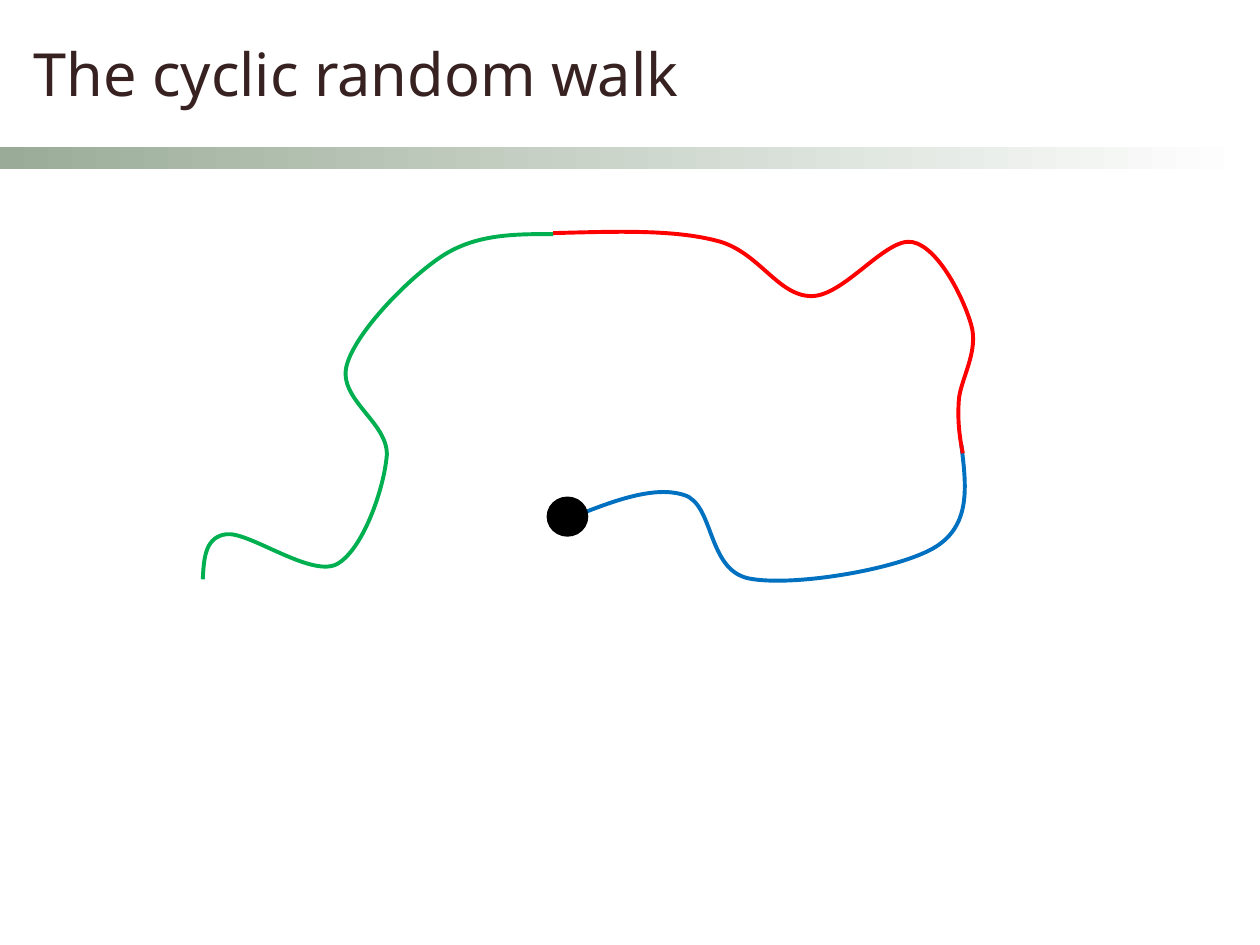
from math import cos, radians, sin

from lxml.etree import SubElement
from pptx import Presentation
from pptx.dml.color import RGBColor
from pptx.enum.shapes import MSO_SHAPE as Preset
from pptx.enum.text import MSO_ANCHOR as Anchor, PP_ALIGN as Align
from pptx.oxml.ns import qn
from pptx.util import Cm, Pt

BROWN = RGBColor(0x37, 0x22, 0x21)
SAGE = RGBColor(0x9A, 0xAC, 0x98)
WHITE = RGBColor(0xFF, 0xFF, 0xFF)
BLACK = RGBColor(0, 0, 0)
BLUE = RGBColor(0x00, 0x70, 0xC0)
RED = RGBColor(0xFF, 0, 0)
GREEN = RGBColor(0x00, 0xB0, 0x50)

TITLE = "The cyclic random walk"
FONT = "Noto Sans"

# Each stretch: colour, tilt in degrees, Bezier points in cm (start, then triples).
STRETCHES = [
    (BLUE, 0, [
        (11.46, 10.46),
        (12.32, 10.11), (13.18, 9.78), (13.79, 9.98),
        (14.4, 10.16), (14.25, 11.48), (15.09, 11.66),
        (15.95, 11.84), (18.14, 11.48), (18.87, 11.02),
        (19.58, 10.57), (19.48, 9.78), (19.38, 8.97),
    ]),
    (RED, 0, [
        (19.41, 9.14),
        (19.35, 8.84), (19.3, 8.51), (19.33, 8.08),
        (19.35, 7.67), (19.74, 7.09), (19.58, 6.55),
        (19.43, 6.02), (18.92, 4.98), (18.39, 4.88),
        (17.86, 4.78), (17.02, 5.97), (16.36, 5.97),
        (15.67, 5.97), (15.29, 5.05), (14.43, 4.85),
        (13.54, 4.62), (12.34, 4.67), (11.15, 4.7),
    ]),
    (GREEN, -4.7, [
        (11.15, 4.72),
        (10.36, 4.72), (9.6, 4.72), (8.92, 5.16),
        (8.23, 5.61), (7.16, 6.71), (6.99, 7.37),
        (6.81, 8.05), (7.82, 8.51), (7.8, 9.17),
        (7.75, 9.83), (7.32, 11.1), (6.78, 11.38),
        (6.25, 11.63), (5.03, 10.72), (4.57, 10.77),
        (4.14, 10.82), (4.11, 11.25), (4.09, 11.68),
    ]),
]
TILT_CENTRE = (7.63, 8.18)


def add_text(slide, text, *, box, size, color, font=FONT, insets, indent):
    holder = slide.shapes.add_textbox(*map(Cm, box))
    frame = holder.text_frame
    frame.word_wrap = True
    frame.vertical_anchor = Anchor.BOTTOM
    (frame.margin_left, frame.margin_top,
     frame.margin_right, frame.margin_bottom) = map(Cm, insets)
    paragraph = frame.paragraphs[0]
    paragraph.alignment = Align.LEFT
    paragraph._p.get_or_add_pPr().set("marL", str(Cm(indent)))
    run = paragraph.add_run()
    run.text = text
    run.font.name, run.font.size = font, Pt(size)
    run.font.color.rgb = color


def add_preset(shapes, preset, box):
    shape = shapes.add_shape(preset, *map(Cm, box))
    shape.shadow.inherit = False
    shape.line.fill.background()
    return shape


def turn(point, degrees):
    angle = radians(degrees)
    dx, dy = (value - middle for value, middle in zip(point, TILT_CENTRE))
    return (TILT_CENTRE[0] + dx * cos(angle) - dy * sin(angle),
            TILT_CENTRE[1] + dx * sin(angle) + dy * cos(angle))


def add_curve(shapes, points, color, tilt):
    start, *rest = [tuple(map(Cm, turn(point, -tilt))) for point in points]
    builder = shapes.build_freeform(*start)
    builder.add_line_segments(rest, close=False)
    curve = builder.convert_to_shape()
    curve.rotation = tilt
    curve.shadow.inherit = False
    curve.fill.background()
    curve.line.color.rgb = color
    curve.line.width = Pt(2.25)

    outline = next(curve._element.iter(qn("a:path")))
    segments = outline.findall(qn("a:lnTo"))
    for first in range(0, len(segments), 3):
        bezier = SubElement(outline, qn("a:cubicBezTo"))
        for segment in segments[first:first + 3]:
            bezier.append(segment[0])
            outline.remove(segment)


def main():
    deck = Presentation()
    deck.slide_width, deck.slide_height = Cm(25.4), Cm(19.05)
    slide = deck.slides.add_slide(deck.slide_layouts[6])

    band = add_preset(slide.shapes, Preset.RECTANGLE, (0, 2.97, 25.17, 0.43))
    band.fill.gradient()
    band.fill.gradient_angle = 0
    for stop, color, position in zip(band.fill.gradient_stops, (SAGE, WHITE), (0, 1)):
        stop.color.rgb = color
        stop.position = position

    add_text(slide, TITLE, box=(0.43, 0.43, 21.34, 1.9), size=34, color=BROWN,
             insets=(0.15, 0.15, 0.36, 0.15), indent=0.1)

    walk = slide.shapes.add_group_shape()
    for color, tilt, points in STRETCHES:
        add_curve(walk.shapes, points, color, tilt)
    walker = add_preset(walk.shapes, Preset.OVAL, (11.02, 10.01, 0.84, 0.81))
    walker.fill.solid()
    walker.fill.fore_color.rgb = BLACK

    deck.save("out.pptx")


if __name__ == "__main__":
    main()
